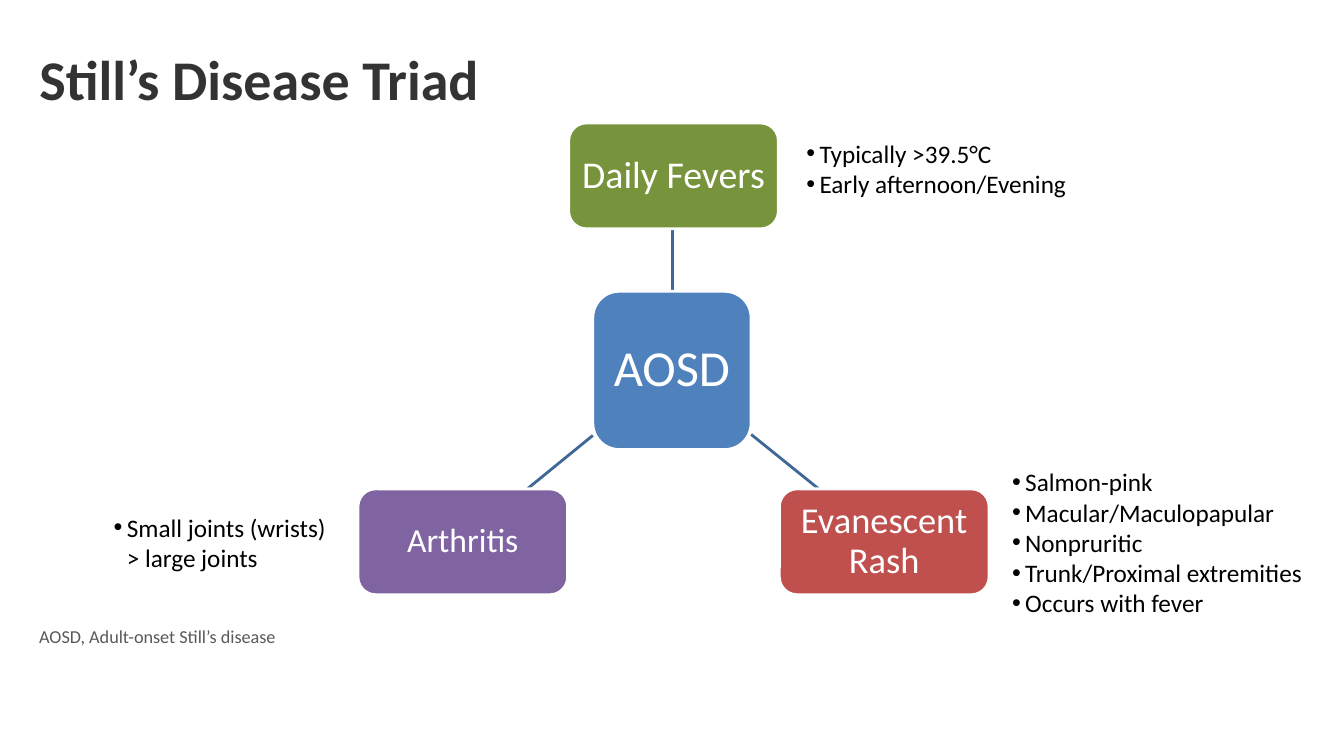
from lxml.etree import SubElement
from pptx import Presentation
from pptx.dml.color import RGBColor
from pptx.enum.shapes import MSO_CONNECTOR as Connector, MSO_SHAPE as Shape
from pptx.enum.text import MSO_ANCHOR as Anchor, MSO_AUTO_SIZE as AutoSize, PP_ALIGN as Align
from pptx.oxml.ns import qn
from pptx.util import Pt

PX = 9144  # 100 px to the inch
WHITE = "FFFFFF"


def color(value):
    return RGBColor.from_string(value)


def write(shape, lines, size, text_color, bold=False, align=Align.LEFT,
          spacing=1.0, bullets=False, **frame_format):
    """Fill a shape with one paragraph per line."""
    frame = shape.text_frame
    for name, value in ({"word_wrap": True, "auto_size": AutoSize.NONE} | frame_format).items():
        setattr(frame, name, value)
    for index, line in enumerate(lines):
        paragraph = frame.add_paragraph() if index else frame.paragraphs[0]
        paragraph.alignment = align
        paragraph.line_spacing = spacing
        if bullets:
            properties = paragraph._p.get_or_add_pPr()
            properties.set("marL", str(13 * PX))
            properties.set("indent", str(-13 * PX))
            SubElement(properties, qn("a:buFont"), typeface="Arial")
            SubElement(properties, qn("a:buChar"), char="•")
        run = paragraph.add_run()
        run.text = line
        for name, value in {"name": "Calibri", "size": Pt(size), "bold": bold}.items():
            setattr(run.font, name, value)
        run.font.color.rgb = color(text_color)


presentation = Presentation()
presentation.slide_width, presentation.slide_height = 1333 * PX, 750 * PX
slide = presentation.slides.add_slide(presentation.slide_layouts[5])
shapes = slide.shapes

# Title
title = shapes.title
title.left, title.top, title.width, title.height = [n * PX for n in (29, 19, 1278, 125)]
write(title, ["Still’s Disease Triad"], 40, "333333", bold=True, spacing=0.9,
      vertical_anchor=Anchor.MIDDLE)

# Spokes from the centre to each sign
for spoke in [(667, 289, 667, 228), (745, 431, 812, 485), (588, 432, 523, 485)]:
    connector = shapes.add_connector(Connector.STRAIGHT, *[n * PX for n in spoke])
    connector.line.color.rgb = color("3F6797")
    connector.line.width = Pt(2)
    SubElement(connector._element.spPr, qn("a:effectLst"))

# Centre and the three signs: label, box, fill, text size, inset
nodes = [
    ("AOSD", (588, 289, 157, 157), "4F81BD", 36, 10),
    ("Daily Fevers", (564, 122, 208, 105), "77933C", 27, 7),
    ("Evanescent Rash", (773, 485, 208, 105), "C0504D", 26, 7),
    ("Arthritis", (355, 485, 208, 105), "8064A2", 24, 7),
]
for label, box, fill, size, inset in nodes:
    node = shapes.add_shape(Shape.ROUNDED_RECTANGLE, *[n * PX for n in box])
    node.shadow.inherit = False
    node.fill.solid()
    node.fill.fore_color.rgb = color(fill)
    node.line.color.rgb = color(WHITE)
    node.line.width = Pt(2)
    margins = {f"margin_{side}": inset * PX for side in ("left", "right", "top", "bottom")}
    write(node, [label], size, WHITE, align=Align.CENTER, spacing=0.9,
          vertical_anchor=Anchor.MIDDLE, **margins)

# Details beside each sign: box, wrapping, lines
details = [
    ((994, 458, 310, 162), False, ["Salmon-pink", "Macular/Maculopapular", "Nonpruritic",
                                   "Trunk/Proximal extremities", "Occurs with fever"]),
    ((103, 503, 247, 71), True, ["Small joints (wrists) > large joints"]),
    ((790, 132, 281, 71), False, ["Typically >39.5°C", "Early afternoon/Evening"]),
]
for box, wrap, lines in details:
    detail = shapes.add_textbox(*[n * PX for n in box])
    write(detail, lines, 18, "000000", bullets=True, word_wrap=wrap,
          auto_size=AutoSize.SHAPE_TO_FIT_TEXT)

# Footnote
footnote = shapes.add_textbox(*[n * PX for n in (29, 618, 1278, 30)])
write(footnote, ["AOSD, Adult-onset Still’s disease"], 13, "595959", spacing=0.9)

presentation.save("out.pptx")
